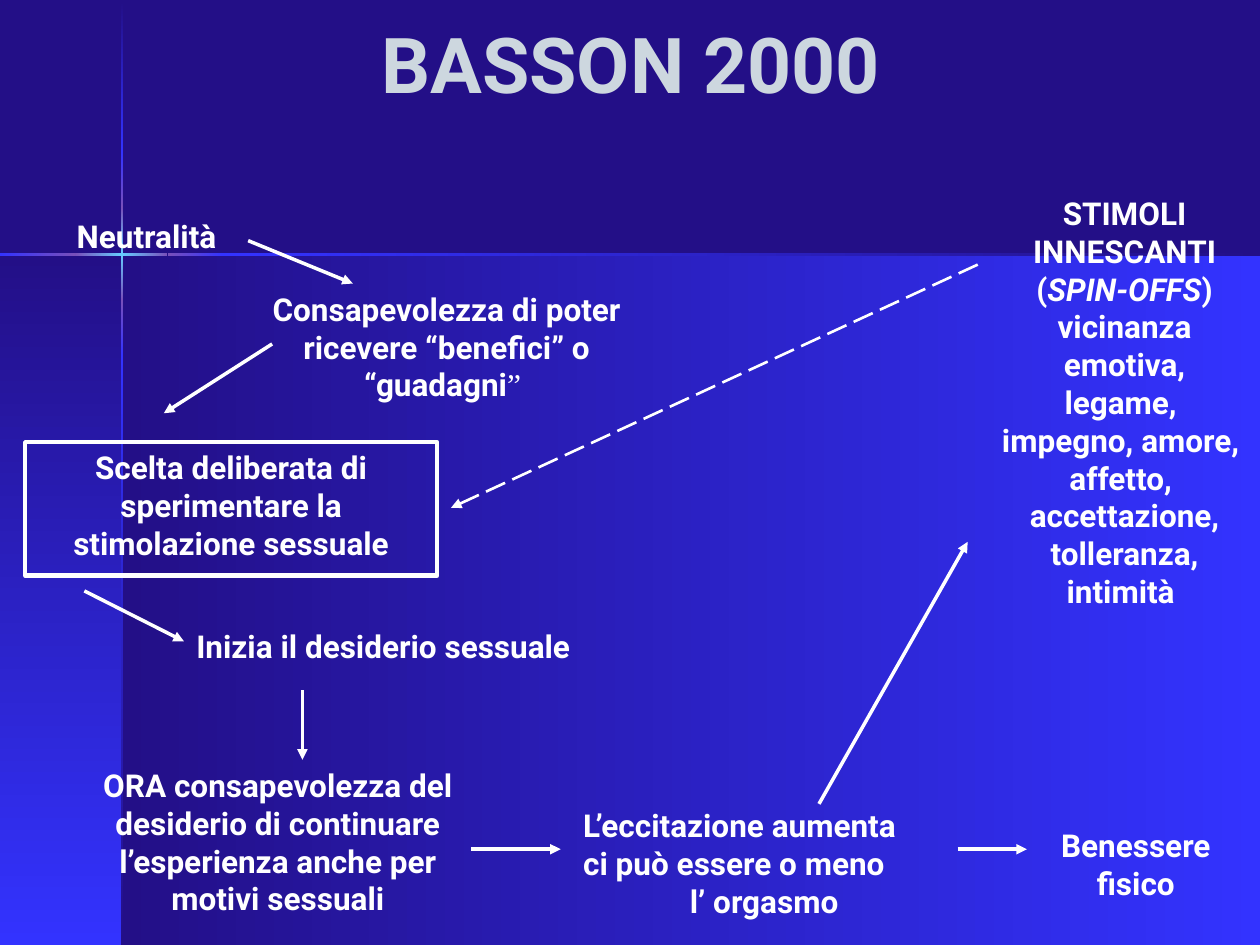
from lxml.etree import SubElement
from pptx import Presentation
from pptx.dml.color import RGBColor
from pptx.enum.dml import MSO_LINE
from pptx.enum.shapes import MSO_CONNECTOR, MSO_SHAPE
from pptx.enum.text import MSO_ANCHOR, PP_ALIGN
from pptx.oxml.ns import qn
from pptx.util import Pt

PX = 9144
NAVY = RGBColor(0x23, 0x0F, 0x87)
BLUE = RGBColor(0x33, 0x33, 0xFF)
VIOLET = RGBColor(0x78, 0x50, 0xBA)
CYAN = RGBColor(0x66, 0xCC, 0xFF)
SILVER = RGBColor(0xCD, 0xD7, 0xDF)
WHITE = RGBColor(0xFF, 0xFF, 0xFF)
RIGHTWARD, DOWNWARD = 0, 270


class SlideBuilder:
    font_name = "Roboto"
    text_size = 18
    title_size = 44

    def __init__(self, slide):
        self.slide = slide
        slide.background.fill.solid()
        slide.background.fill.fore_color.rgb = NAVY

    def scaled(self, *lengths):
        return [length * PX for length in lengths]

    def set_text(self, frame, paragraphs, align, size, color):
        frame.word_wrap = True
        frame.vertical_anchor = MSO_ANCHOR.TOP
        for index, words in enumerate(paragraphs):
            paragraph = frame.add_paragraph() if index else frame.paragraphs[0]
            paragraph.alignment = align
            paragraph.font.name = self.font_name
            paragraph.font.size = Pt(size)
            paragraph.font.bold = True
            paragraph.font.color.rgb = color
            paragraph.add_run().text = words
        return frame.paragraphs

    def title(self, box, words):
        heading = self.slide.shapes.title
        heading.left, heading.top, heading.width, heading.height = self.scaled(*box)
        self.set_text(heading.text_frame, [words], PP_ALIGN.CENTER, self.title_size, SILVER)
        heading.text_frame.vertical_anchor = MSO_ANCHOR.MIDDLE

    def text(self, box, *paragraphs, align=PP_ALIGN.CENTER):
        label = self.slide.shapes.add_textbox(*self.scaled(*box))
        return self.set_text(label.text_frame, paragraphs, align, self.text_size, WHITE)

    def rectangle(self, box):
        panel = self.slide.shapes.add_shape(MSO_SHAPE.RECTANGLE, *self.scaled(*box))
        panel.shadow.inherit = False
        return panel

    def framed_text(self, box, words):
        panel = self.rectangle(box)
        panel.fill.background()
        panel.line.color.rgb = WHITE
        panel.line.width = Pt(2.5)
        self.set_text(panel.text_frame, [words], PP_ALIGN.CENTER, self.text_size, WHITE)

    def gradient(self, box, angle, *colors):
        band = self.rectangle(box)
        band.line.fill.background()
        band.fill.gradient()
        band.fill.gradient_angle = angle
        stops = next(band._element.spPr.iter(qn("a:gsLst")))
        stops.clear()
        for index, color in enumerate(colors):
            position = 100000 * index // (len(colors) - 1)
            stop = SubElement(stops, qn("a:gs"), pos=str(position))
            SubElement(stop, qn("a:srgbClr"), val=str(color))

    def arrow(self, start, end, width=2, dash=None):
        connector = self.slide.shapes.add_connector(
            MSO_CONNECTOR.STRAIGHT, *self.scaled(*start, *end))
        connector.line.color.rgb = WHITE
        connector.line.width = Pt(width)
        if dash:
            connector.line.dash_style = dash
        outline = connector._element.spPr.find(qn("a:ln"))
        SubElement(outline, qn("a:tailEnd"), type="triangle")
        SubElement(connector._element.spPr, qn("a:effectLst"))


def main():
    presentation = Presentation()
    presentation.slide_width, presentation.slide_height = 1000 * PX, 750 * PX
    title_only = presentation.slide_layouts[5]
    builder = SlideBuilder(presentation.slides.add_slide(title_only))

    builder.gradient((97, 202, 903, 548), RIGHTWARD, NAVY, BLUE)
    builder.gradient((0, 202, 97, 548), DOWNWARD, NAVY, BLUE)

    vertical_beam = [
        (1, 121, (NAVY, BLUE)),
        (121, 165, (BLUE, VIOLET)),
        (165, 238, (VIOLET, CYAN, VIOLET)),
        (238, 282, (VIOLET, BLUE)),
        (282, 750, (BLUE, NAVY)),
    ]
    for top, bottom, colors in vertical_beam:
        builder.gradient((96, top, 2, bottom - top), DOWNWARD, *colors)

    horizontal_beam = [
        (0, 60, (BLUE, VIOLET)),
        (60, 133, (VIOLET, CYAN, VIOLET)),
        (133, 177, (VIOLET, BLUE)),
        (177, 1000, (BLUE, NAVY)),
    ]
    for left, right, colors in horizontal_beam:
        builder.gradient((left, 201, right - left, 2), RIGHTWARD, *colors)

    builder.title((51, 0, 900, 99), "BASSON 2000")

    awareness = builder.text(
        (193, 225, 323, 101), "Consapevolezza di poter ricevere “benefici” o “guadagni")
    closing_quote = awareness[0].add_run()
    closing_quote.text = "” "
    closing_quote.font.name = "Times New Roman"
    closing_quote.font.bold = False

    builder.framed_text(
        (20, 351, 327, 106), "Scelta deliberata di sperimentare la stimolazione sessuale")
    builder.text(
        (51, 603, 339, 102),
        "ORA consapevolezza del desiderio di continuare l’esperienza anche per motivi sessuali")
    arousal = builder.text(
        (453, 635, 307, 56),
        "L’eccitazione aumenta", "ci può essere o meno", "l’ orgasmo", align=PP_ALIGN.LEFT)
    arousal[-1].alignment = PP_ALIGN.CENTER
    builder.text((823, 651, 157, 47), "Benessere fisico")

    triggers = builder.text(
        (785, 149, 215, 335),
        "STIMOLI INNESCANTI (", "vicinanza emotiva,", "legame, ", "impegno, amore, ",
        "affetto, ", "accettazione,", "tolleranza, intimità ")
    spin_offs = triggers[0].add_run()
    spin_offs.text = "SPIN-OFFS"
    spin_offs.font.italic = True
    triggers[0].add_run().text = ")"

    builder.text((51, 167, 158, 40), "Neutralità", align=PP_ALIGN.LEFT)
    builder.text((146, 493, 354, 46), "Inizia il desiderio sessuale", align=PP_ALIGN.LEFT)

    steps = [
        ((197, 191), (280, 225)),
        ((216, 273), (130, 328)),
        ((67, 469), (146, 509)),
        ((240, 548), (240, 603)),
        ((374, 674), (445, 674)),
        ((760, 674), (815, 674)),
        ((650, 638), (768, 430)),
    ]
    for start, end in steps:
        builder.arrow(start, end)
    builder.arrow((776, 210), (358, 403), width=1.5, dash=MSO_LINE.LONG_DASH)

    presentation.save("out.pptx")


if __name__ == "__main__":
    main()
